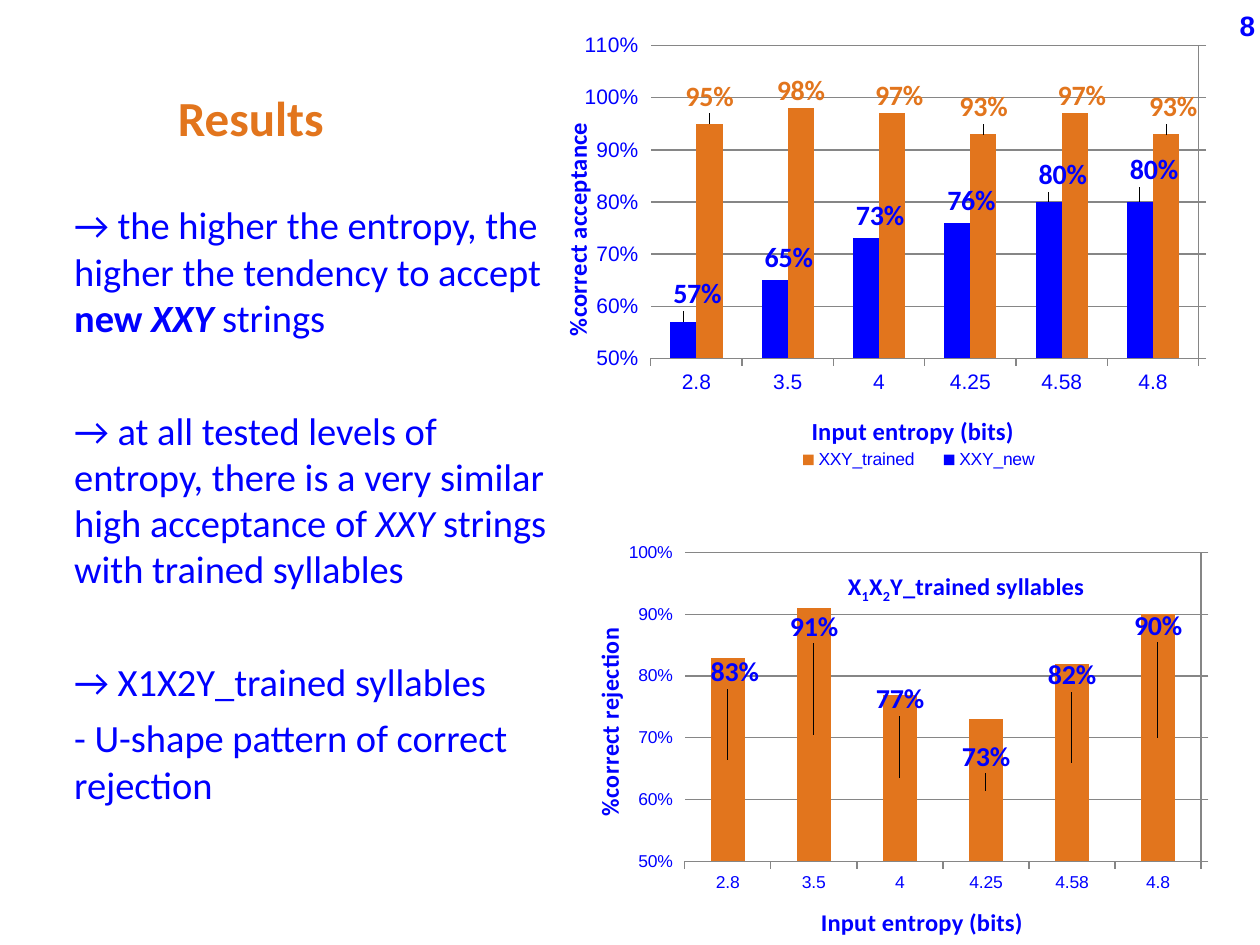
from lxml.etree import SubElement
from pptx import Presentation
from pptx.chart.data import CategoryChartData
from pptx.dml.color import RGBColor
from pptx.enum.chart import XL_CHART_TYPE, XL_LABEL_POSITION, XL_LEGEND_POSITION, XL_TICK_LABEL_POSITION, XL_TICK_MARK
from pptx.enum.text import MSO_ANCHOR, PP_ALIGN
from pptx.oxml.ns import qn
from pptx.oxml.xmlchemy import OxmlElement
from pptx.util import Inches, Pt

BLUE, ORANGE, GRAY = "0000FF", "E2751D", "868686"
BOLD, ITALIC, SUBSCRIPT = {"bold": True}, {"italic": True}, {"subscript": True}
TITLE_FONT = {"name": "Calibri", "size": 14, "bold": True, "color": BLUE}
ENTROPY = ["4.8", "4.58", "4.25", "4", "3.5", "2.8"]
ENTROPY_TITLE = [("Input entropy (bits)", {})]

TEXTS = [
    {"box": (0, 0.47, 3.98, 0.74), "anchor": MSO_ANCHOR.BOTTOM, "align": PP_ALIGN.CENTER,
     "font": {"name": "Calibri", "size": 28, "bold": True, "color": ORANGE},
     "paragraphs": [(0, [("Results", {})])]},
    {"box": (0.49, 1.55, 4.02, 5.6), "anchor": MSO_ANCHOR.TOP, "align": PP_ALIGN.LEFT,
     "font": {"name": "Calibri", "size": 22, "color": BLUE},
     "paragraphs": [
         (0, [("→ the higher the entropy, the higher the tendency to accept ", {}),
              ("new ", BOLD), ("XXY ", BOLD | ITALIC), ("strings", {})]),
         (38, [("→ at all tested levels of entropy, there is a very similar high acceptance of ", {}),
               ("XXY", ITALIC), (" strings with trained syllables", {})]),
         (38, [("→ X1X2Y_trained syllables", {})]),
         (6, [("- U-shape pattern of correct rejection", {})])]},
    {"box": (9.74, 0.02, 0.25, 0.37), "anchor": MSO_ANCHOR.TOP, "align": PP_ALIGN.LEFT,
     "font": {"name": "Arial", "size": 16, "bold": True, "color": BLUE},
     "paragraphs": [(0, [("8", {})])]},
]

CHARTS = [
    {"box": (4.19, 0.02, 5.54, 3.99), "type": XL_CHART_TYPE.COLUMN_CLUSTERED, "overlap": 0,
     "plot": (0.176, 0.086, 0.785, 0.622), "maximum": 1.1, "tick_size": 12,
     "title": (ENTROPY_TITLE, (0.4, 0.81)), "category_title": None,
     "value_title": ([("%correct acceptance", {})], (0.04, 0.23)),
     "legend": (0.36, 0.875, 0.4, 0.07), "label_position": XL_LABEL_POSITION.OUTSIDE_END,
     "series": [
         ("XXY_trained", [0.93, 0.97, 0.93, 0.97, 0.98, 0.95], ORANGE, ORANGE,
          [(0.01, -0.01), (0.01, 0.01), (0, -0.01), (0.01, 0.01), (0, 0.01), (0, -0.01)]),
         ("XXY_new", [0.8, 0.8, 0.76, 0.73, 0.65, 0.57], BLUE, BLUE,
          [(0.02, -0.02), (0.02, -0.01), (0.02, 0), (0.02, 0), (0.02, 0), (0.02, -0.01)])]},
    {"box": (4.5, 4.13, 5.5, 3.37), "type": XL_CHART_TYPE.COLUMN_STACKED, "overlap": 100,
     "plot": (0.17, 0.078, 0.745, 0.746), "maximum": 1, "tick_size": 10,
     "title": ([("X", {}), ("1", SUBSCRIPT), ("X", {}), ("2", SUBSCRIPT),
                ("Y_trained syllables", {})], (0.4, 0.11)),
     "category_title": (ENTROPY_TITLE, (0.36, 0.92)),
     "value_title": ([("%correct rejection", {})], (0.03, 0.26)),
     "legend": None, "label_position": XL_LABEL_POSITION.CENTER,
     "series": [
         ("Series 1", [0.9, 0.82, 0.73, 0.77, 0.91, 0.83], ORANGE, BLUE,
          [(0, -0.27), (0, -0.21), (0, -0.08), (0, -0.19), (0, -0.26), (0.01, -0.21)])]},
]


def color(value):
    return RGBColor.from_string(value)


def style_font(font, values):
    for name, value in values.items():
        if name == "color":
            font.color.rgb = color(value)
        elif name == "subscript":
            font._element.set("baseline", "-25000")
        else:
            setattr(font, name, Pt(value) if name == "size" else value)


def add_runs(paragraph, runs, base):
    for text, extra in runs:
        run = paragraph.add_run()
        run.text = text
        style_font(run.font, base | extra)


def place(element, index, values, mode="edge", inner=False):
    """Give a chart part a manual layout in shares of the chart's size."""
    for old in element.findall(qn("c:layout")):
        element.remove(old)
    layout = OxmlElement("c:layout")
    manual = SubElement(layout, qn("c:manualLayout"))
    settings = [("layoutTarget", "inner")] if inner else []
    if mode == "edge":
        settings += [("xMode", mode), ("yMode", mode)]
    settings += zip("xywh", values)
    for name, value in settings:
        SubElement(manual, qn(f"c:{name}")).set("val", str(value))
    element.insert(index, layout)


def add_title(title, content):
    runs, position = content
    add_runs(title.text_frame.paragraphs[0], runs, TITLE_FONT)
    place(title._element, 1, position)


def add_text(slide, item):
    frame = slide.shapes.add_textbox(*map(Inches, item["box"])).text_frame
    frame.word_wrap = True
    frame.vertical_anchor = item["anchor"]
    for number, (space, runs) in enumerate(item["paragraphs"]):
        paragraph = frame.add_paragraph() if number else frame.paragraphs[0]
        paragraph.alignment = item["align"]
        paragraph.space_before = Pt(space)
        add_runs(paragraph, runs, item["font"])


def style_series(series, fill, label_color, offsets, position):
    series.format.fill.solid()
    series.format.fill.fore_color.rgb = color(fill)
    font = {"name": "Calibri", "size": 16, "bold": True, "color": label_color}
    labels = series.data_labels
    labels.show_value = True
    labels.number_format, labels.number_format_is_linked = "0%", False
    style_font(labels.font, font)
    for index in range(len(offsets)):
        label = series.points[index].data_label
        style_font(label.font, font)
        label.position = position
    for element, offset in zip(labels._element.findall(qn("c:dLbl")), offsets):
        place(element, 1, offset, mode="factor")


def add_chart(slide, item):
    data = CategoryChartData(number_format="0%")
    data.categories = ENTROPY
    for name, values, *_ in item["series"]:
        data.add_series(name, values)
    chart = slide.shapes.add_chart(item["type"], *map(Inches, item["box"]), data).chart
    style_font(chart.font, {"name": "Arial", "size": 10})
    chart.has_title = True
    add_title(chart.chart_title, item["title"])
    plot = chart.plots[0]
    plot.gap_width, plot.overlap, plot.vary_by_categories = 150, item["overlap"], False
    for series, (_, _, fill, label_color, offsets) in zip(plot.series, item["series"]):
        style_series(series, fill, label_color, offsets, item["label_position"])

    category, value = chart.category_axis, chart.value_axis
    category.reverse_order = True
    value.minimum_scale, value.maximum_scale, value.major_unit = 0.5, item["maximum"], 0.1
    value.tick_label_position = XL_TICK_LABEL_POSITION.HIGH
    value.tick_labels.number_format = "0%"
    value.tick_labels.number_format_is_linked = False
    value.has_major_gridlines = True
    for axis, title in ((category, item["category_title"]), (value, item["value_title"])):
        axis.major_tick_mark = XL_TICK_MARK.OUTSIDE
        axis.format.line.color.rgb = color(GRAY)
        style_font(axis.tick_labels.font, {"name": "Arial", "size": item["tick_size"], "color": BLUE})
        axis.has_title = title is not None
        if title:
            add_title(axis.axis_title, title)
    value.major_gridlines.format.line.color.rgb = color(GRAY)

    chart.has_legend = item["legend"] is not None
    if chart.has_legend:
        chart.legend.position = XL_LEGEND_POSITION.LEFT
        chart.legend.include_in_layout = True
        style_font(chart.legend.font, {"name": "Arial", "size": 10, "color": BLUE})
        place(chart.legend._element, 1, item["legend"])
    place(chart._chartSpace.chart.plotArea, 0, item["plot"], inner=True)


def main():
    presentation = Presentation()
    presentation.slide_width, presentation.slide_height = Inches(10), Inches(7.5)
    slide = presentation.slides.add_slide(presentation.slide_layouts[6])
    for item in CHARTS:
        add_chart(slide, item)
    for item in TEXTS:
        add_text(slide, item)
    presentation.save("out.pptx")


if __name__ == "__main__":
    main()
